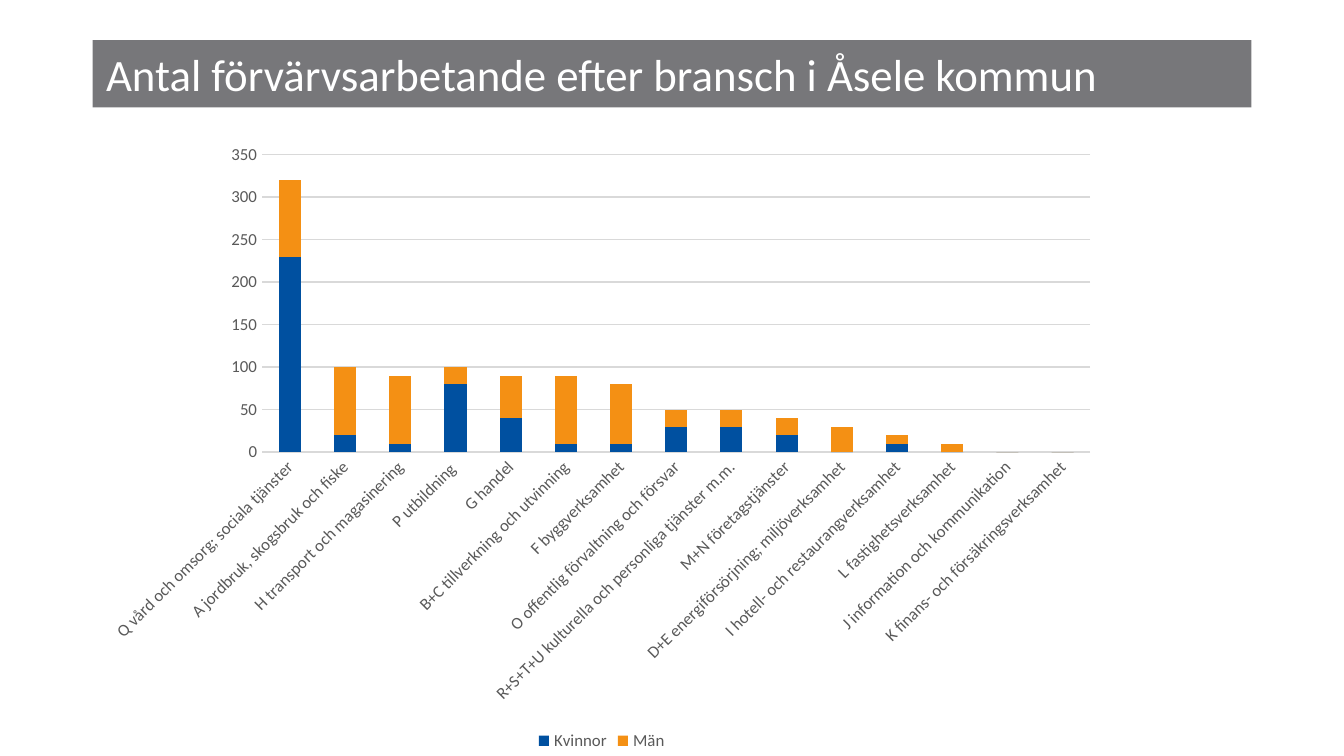
from pptx import Presentation
from pptx.chart.data import CategoryChartData
from pptx.dml.color import RGBColor
from pptx.enum import chart as ch, text as tx
from pptx.util import Cm, Pt

# Content
TITLE = "Antal förvärvsarbetande efter bransch i Åsele kommun"
SEXES = ("Kvinnor", "Män")
ROWS = [
    ("Q vård och omsorg; sociala tjänster", 230, 90),
    ("A jordbruk, skogsbruk och fiske", 20, 80),
    ("H transport och magasinering", 10, 80),
    ("P utbildning ", 80, 20),
    ("G handel", 40, 50),
    ("B+C tillverkning och utvinning", 10, 80),
    ("F byggverksamhet", 10, 70),
    ("O offentlig förvaltning och försvar", 30, 20),
    ("R+S+T+U kulturella och personliga tjänster m.m.", 30, 20),
    ("M+N företagstjänster", 20, 20),
    ("D+E energiförsörjning; miljöverksamhet", 0, 30),
    ("I hotell- och restaurangverksamhet", 10, 10),
    ("L fastighetsverksamhet", 0, 10),
    ("J information och kommunikation", 0, 0),
    ("K finans- och försäkringsverksamhet", 0, 0),
]

THEME = {
    "font": "Calibri", "title": 24, "chart": 10, "label": 9,
    "band": "77777A", "white": "FFFFFF", "black": "000000",
    "grey": "595959", "grid": "D9D9D9", "bars": ("0050A0", "F49014"),
}


def paint(fill, color):
    fill.solid()
    fill.fore_color.rgb = RGBColor.from_string(color)


def style(font, size, color):
    font.name = THEME["font"]
    font.size = Pt(THEME[size])
    font.color.rgb = RGBColor.from_string(THEME[color])


def rule(line):
    paint(line.fill, THEME["grid"])
    line.width = Pt(0.75)


deck = Presentation()
deck.slide_width, deck.slide_height = Cm(25.4), Cm(14.29)
slide = deck.slides.add_slide(deck.slide_layouts[5])

# Title band
title = slide.shapes.title
title.left, title.top = Cm(1.75), Cm(0.76)
title.width, title.height = Cm(21.9), Cm(1.27)
paint(title.fill, THEME["band"])
frame = title.text_frame
frame.text = TITLE
frame.auto_size = tx.MSO_AUTO_SIZE.NONE
frame.vertical_anchor = tx.MSO_ANCHOR.MIDDLE
para = frame.paragraphs[0]
para.alignment = tx.PP_ALIGN.LEFT
style(para.runs[0].font, "title", "white")

# Stacked columns
data = CategoryChartData(number_format="0")
names, *counts = zip(*ROWS)
data.categories = names
for sex, vals in zip(SEXES, counts):
    data.add_series(sex, vals)
chart = slide.shapes.add_chart(
    ch.XL_CHART_TYPE.COLUMN_STACKED,
    Cm(1.75), Cm(2.5), Cm(19.24), Cm(11.79), data).chart
style(chart.font, "chart", "black")
chart.has_title = False
plot = chart.plots[0]
plot.gap_width, plot.overlap = 150, 100
plot.vary_by_categories = False
for bar, color in zip(plot.series, THEME["bars"]):
    paint(bar.format.fill, color)

# Axes
cat, val = chart.category_axis, chart.value_axis
for axis in (cat, val):
    axis.major_tick_mark = axis.minor_tick_mark = ch.XL_TICK_MARK.NONE
    style(axis.tick_labels.font, "label", "grey")
rule(cat.format.line)
val.format.line.fill.background()
val.has_major_gridlines = True
rule(val.major_gridlines.format.line)
val.minimum_scale, val.maximum_scale, val.major_unit = 0, 350, 50
val.tick_labels.number_format = "0"
val.tick_labels.number_format_is_linked = False

# Category labels slanted by 45 degrees
body = cat._element.txPr.bodyPr
body.set("rot", str(-45 * 60000))
body.set("vert", "horz")

# Legend
chart.has_legend = True
chart.legend.position = ch.XL_LEGEND_POSITION.BOTTOM
chart.legend.include_in_layout = False
style(chart.legend.font, "label", "grey")

deck.save("out.pptx")
